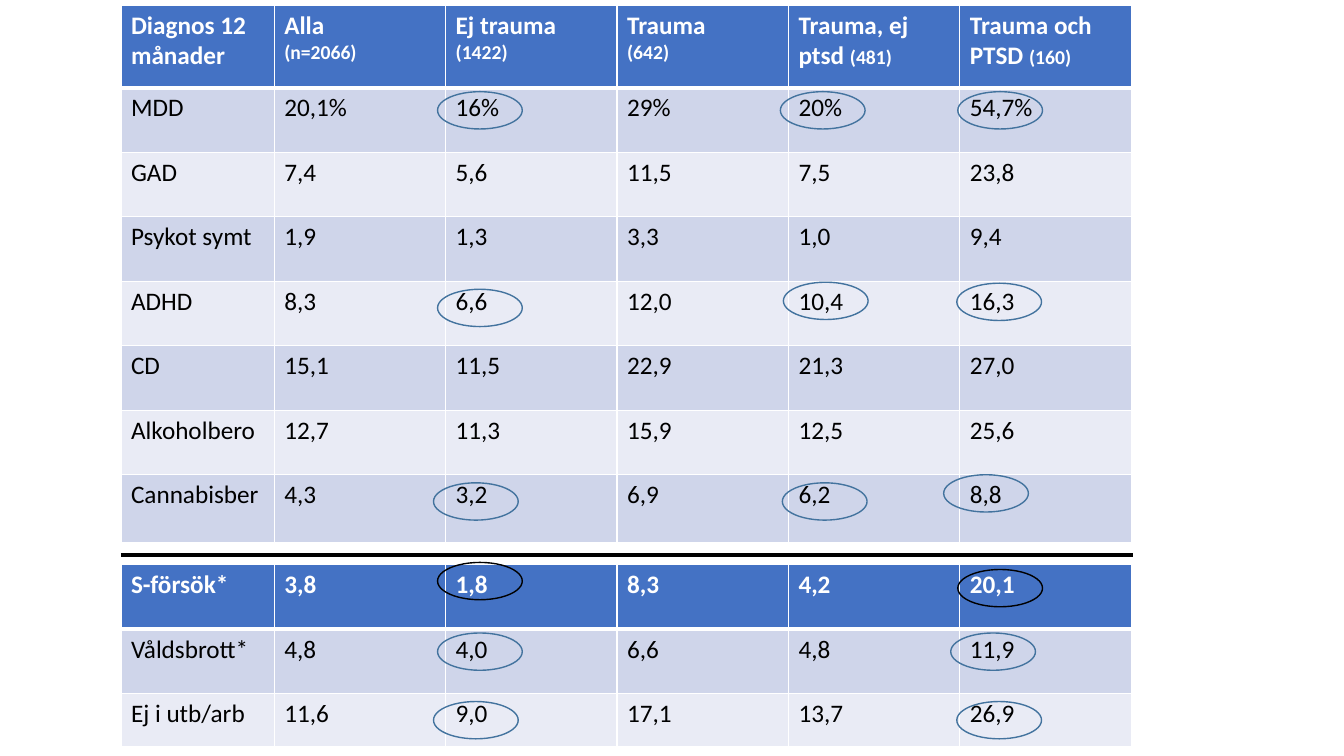
from dataclasses import dataclass

import pptx
import pptx.dml.color
import pptx.enum.shapes
import pptx.oxml
import pptx.oxml.ns
import pptx.util

Inches = pptx.util.Inches
Pt = pptx.util.Pt

BLUE, BANDS = "4472C4", ("CFD5EA", "E9EBF5")
WHITE, BLACK, STEEL = "FFFFFF", "000000", "43739E"
LEFT, RIGHT = 1.2, 11.24
WIDTHS = [1.52] + [1.7] * 5


@dataclass
class Grid:
    top: float
    heights: list[float]
    rows: list[list[str]]


@dataclass
class Ring:
    left: float
    top: float
    hue: str = STEEL


GRIDS = [
    Grid(0.05, [0.82] + [0.64] * 6 + [0.67], [
        ["Diagnos 12 månader", "Alla\n(n=2066)", "Ej trauma (1422)",
         "Trauma\n(642)", "Trauma, ej ptsd (481)", "Trauma och PTSD (160)"],
        ["MDD", "20,1%", "16%", "29%", "20%", "54,7%"],
        ["GAD", "7,4", "5,6", "11,5", "7,5", "23,8"],
        ["Psykot symt", "1,9", "1,3", "3,3", "1,0", "9,4"],
        ["ADHD", "8,3", "6,6", "12,0", "10,4", "16,3"],
        ["CD", "15,1", "11,5", "22,9", "21,3", "27,0"],
        ["Alkoholbero", "12,7", "11,3", "15,9", "12,5", "25,6"],
        ["Cannabisber", "4,3", "3,2", "6,9", "6,2", "8,8"],
    ]),
    Grid(5.6, [0.64, 0.64, 0.53], [
        ["S-försök*", "3,8", "1,8", "8,3", "4,2", "20,1"],
        ["Våldsbrott*", "4,8", "4,0", "6,6", "4,8", "11,9"],
        ["Ej i utb/arb", "11,6", "9,0", "17,1", "13,7", "26,9"],
    ]),
]

RINGS = [
    Ring(4.34, 0.91), Ring(7.74, 0.91), Ring(9.5, 0.91),
    Ring(4.34, 2.87), Ring(7.77, 2.8), Ring(9.49, 2.81),
    Ring(4.3, 4.79), Ring(7.76, 4.79), Ring(9.36, 4.71),
    Ring(4.34, 5.58, BLACK), Ring(9.5, 5.65, BLACK),
    Ring(4.34, 6.28), Ring(9.43, 6.28),
    Ring(4.3, 6.96), Ring(9.49, 6.96),
]


def color(code: str) -> pptx.dml.color.RGBColor:
    return pptx.dml.color.RGBColor.from_string(code)


def edge(cell, side: str, width: float) -> None:
    """Draw one white cell border."""
    props = cell._tc.get_or_add_tcPr()
    line = pptx.oxml.parse_xml(
        f'<a:ln{side} {pptx.oxml.ns.nsdecls("a")} w="{Pt(width)}"><a:solidFill>'
        f'<a:srgbClr val="{WHITE}"/></a:solidFill></a:ln{side}>')
    props.append(line)


def write(cell, text: str, head: bool) -> None:
    """Fill a cell with text; a part in brackets is set smaller."""
    frame = cell.text_frame
    for i, line in enumerate(text.split("\n")):
        para = frame.add_paragraph() if i else frame.paragraphs[0]
        para.font.name = "Calibri"
        para.font.size = Pt(18)
        para.font.bold = head
        para.font.color.rgb = color(WHITE if head else BLACK)
        main, mark, rest = line.partition("(")
        if main:
            para.add_run().text = main
        if mark:
            note = para.add_run()
            note.text = mark + rest
            note.font.size = Pt(14)


def draw_grid(slide, grid: Grid) -> None:
    table = slide.shapes.add_table(
        len(grid.rows), len(WIDTHS), Inches(LEFT), Inches(grid.top),
        Inches(sum(WIDTHS)), Inches(sum(grid.heights))).table
    for col, width in zip(table.columns, WIDTHS):
        col.width = Inches(width)
    for r, (height, texts) in enumerate(zip(grid.heights, grid.rows)):
        table.rows[r].height = Inches(height)
        for c, text in enumerate(texts):
            cell = table.cell(r, c)
            write(cell, text, r == 0)
            for side in "LR":
                edge(cell, side, 1)
            edge(cell, "T", 3 if r == 1 else 1)
            edge(cell, "B", 3 if r == 0 else 1)
            cell.fill.solid()
            cell.fill.fore_color.rgb = color(BANDS[(r - 1) % 2] if r else BLUE)


def draw_rule(slide, top: float) -> None:
    rule = slide.shapes.add_connector(
        pptx.enum.shapes.MSO_CONNECTOR.STRAIGHT,
        Inches(LEFT), Inches(top), Inches(RIGHT), Inches(top))
    rule.line.color.rgb = color(BLACK)
    rule.line.width = Pt(3)
    rule._element.spPr.append(pptx.oxml.parse_xml(
        f'<a:effectLst {pptx.oxml.ns.nsdecls("a")}/>'))


def draw_ring(slide, ring: Ring) -> None:
    shape = slide.shapes.add_shape(
        pptx.enum.shapes.MSO_SHAPE.OVAL, Inches(ring.left), Inches(ring.top),
        Inches(0.84), Inches(0.37))
    shape.shadow.inherit = False
    shape.fill.background()
    shape.line.color.rgb = color(ring.hue)
    shape.line.width = Pt(1)


def main() -> None:
    deck = pptx.Presentation()
    deck.slide_width, deck.slide_height = Inches(13.33), Inches(7.5)
    slide = deck.slides.add_slide(deck.slide_layouts[6])
    for grid in GRIDS:
        draw_grid(slide, grid)
    draw_rule(slide, 5.51)
    for ring in RINGS:
        draw_ring(slide, ring)
    deck.save("out.pptx")


if __name__ == "__main__":
    main()
